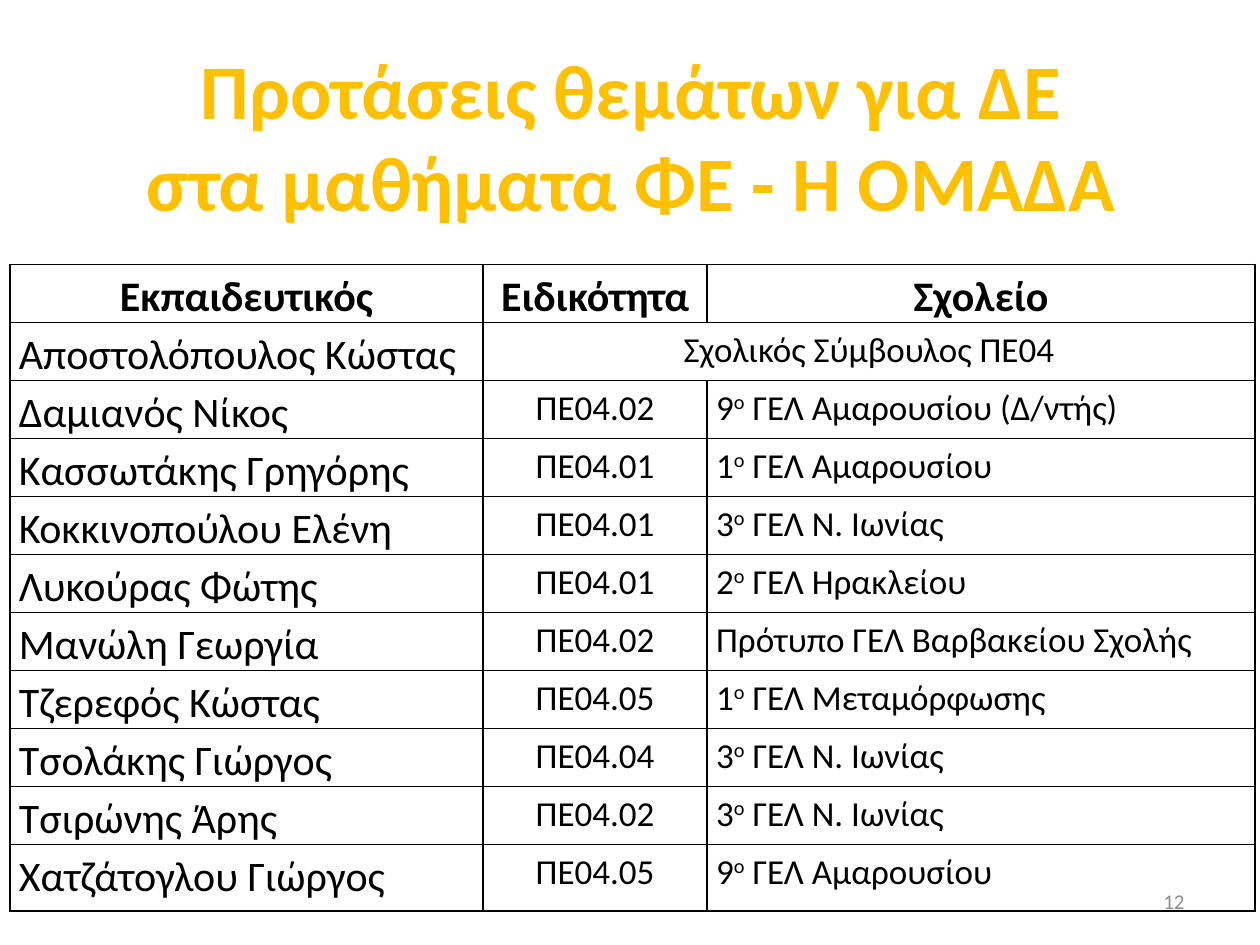
from lxml import etree
from pptx import Presentation
from pptx.dml.color import RGBColor
from pptx.enum.text import MSO_ANCHOR, PP_ALIGN
from pptx.oxml.ns import qn
from pptx.util import Cm, Pt

LEFT, MID, RIGHT = PP_ALIGN.LEFT, PP_ALIGN.CENTER, PP_ALIGN.RIGHT
CENTRE = MSO_ANCHOR.MIDDLE
FACE = "Calibri"
BLACK, GOLD, GREY = "000000", "FFC000", "8C8C8C"

TITLE = "Προτάσεις θεμάτων για ΔΕ\vστα μαθήματα ΦΕ - Η ΟΜΑΔΑ"
HEADS = ["Εκπαιδευτικός", "Ειδικότητα", "Σχολείο"]
STAFF = [
    ("Αποστολόπουλος Κώστας", "Σχολικός Σύμβουλος ΠΕ04", ""),
    ("Δαμιανός Νίκος", "ΠΕ04.02", "9^ο^ ΓΕΛ Αμαρουσίου (Δ/ντής)"),
    ("Κασσωτάκης Γρηγόρης", "ΠΕ04.01", "1^ο^ ΓΕΛ Αμαρουσίου"),
    ("Κοκκινοπούλου Ελένη", "ΠΕ04.01", "3^ο^ ΓΕΛ Ν. Ιωνίας"),
    ("Λυκούρας Φώτης", "ΠΕ04.01", "2^ο^ ΓΕΛ Ηρακλείου"),
    ("Μανώλη Γεωργία", "ΠΕ04.02", "Πρότυπο ΓΕΛ Βαρβακείου Σχολής"),
    ("Τζερεφός Κώστας", "ΠΕ04.05", "1^ο^ ΓΕΛ Μεταμόρφωσης"),
    ("Τσολάκης Γιώργος", "ΠΕ04.04", "3^ο^ ΓΕΛ Ν. Ιωνίας"),
    ("Τσιρώνης Άρης", "ΠΕ04.02", "3^ο^ ΓΕΛ Ν. Ιωνίας"),
    ("Χατζάτογλου Γιώργος", "ΠΕ04.05", "9^ο^ ΓΕΛ Αμαρουσίου"),
]
SHARES = [0.38, 0.18, 0.44]


def paint(font, size, color, bold=False):
    """Set the face, size, colour and weight of a font."""
    font.name, font.size, font.bold = FACE, Pt(size), bold
    font.color.rgb = RGBColor.from_string(color)


def label(slide, box, text, size, color, align, bold=False):
    """Place a text box, centred in height, in the given box."""
    frame = slide.shapes.add_textbox(*map(Cm, box)).text_frame
    frame.word_wrap, frame.vertical_anchor = True, CENTRE
    para = frame.paragraphs[0]
    para.text, para.alignment = text, align
    paint(para.font, size, color, bold)


def border(cell):
    """Draw a thin black line on all four sides of a cell."""
    props = cell._tc.get_or_add_tcPr()
    for side in ("lnL", "lnR", "lnT", "lnB"):
        line = etree.SubElement(props, qn(f"a:{side}"), w=str(Pt(1)))
        fill = etree.SubElement(line, qn("a:solidFill"))
        etree.SubElement(fill, qn("a:srgbClr"), val=BLACK)


def write(cell, text, size, align, bold):
    """Fill a cell with text, raising the parts between carets."""
    border(cell)
    cell.fill.background()
    cell.margin_left = cell.margin_right = Cm(0.18)
    cell.margin_top = cell.margin_bottom = 0
    para = cell.text_frame.paragraphs[0]
    para.alignment, para.line_spacing = align, 1.15
    para.space_before = para.space_after = Pt(2)
    paint(para.font, size, BLACK, bold)
    for i, part in enumerate(text.split("^") if text else []):
        run = para.add_run()
        run.text = part
        if i % 2:
            run._r.get_or_add_rPr().set("baseline", "30000")


def roster(slide, box):
    """Place the table of teachers in the given box."""
    left, top, width, height = box
    count = len(STAFF) + 1
    table = slide.shapes.add_table(count, len(HEADS), *map(Cm, box)).table
    table.first_row = table.horz_banding = False
    for col, share in zip(table.columns, SHARES):
        col.width = Cm(width * share)
    for row in table.rows:
        row.height = Cm(1)
    table.rows[count - 1].height = Cm(height - count + 1)
    for c, head in enumerate(HEADS):
        write(table.cell(0, c), head, 24, MID, True)
    for r, person in enumerate(STAFF, 1):
        for c, text in enumerate(person):
            size = 20 if c else 24
            write(table.cell(r, c), text, size, MID if c == 1 else LEFT, False)
    table.cell(1, 1).merge(table.cell(1, 2))


def main():
    """Build the slide and save it."""
    deck = Presentation()
    deck.slide_width, deck.slide_height = Cm(25.4), Cm(19.05)
    slide = deck.slides.add_slide(deck.slide_layouts[6])
    label(slide, (1.3, 0.91, 22.86, 3.61), TITLE, 44, GOLD, MID, True)
    roster(slide, (0.2, 5.33, 25.1, 11.35))
    label(slide, (18.2, 17.66, 5.93, 1.01), "12", 12, GREY, RIGHT)
    deck.save("out.pptx")


if __name__ == "__main__":
    main()
